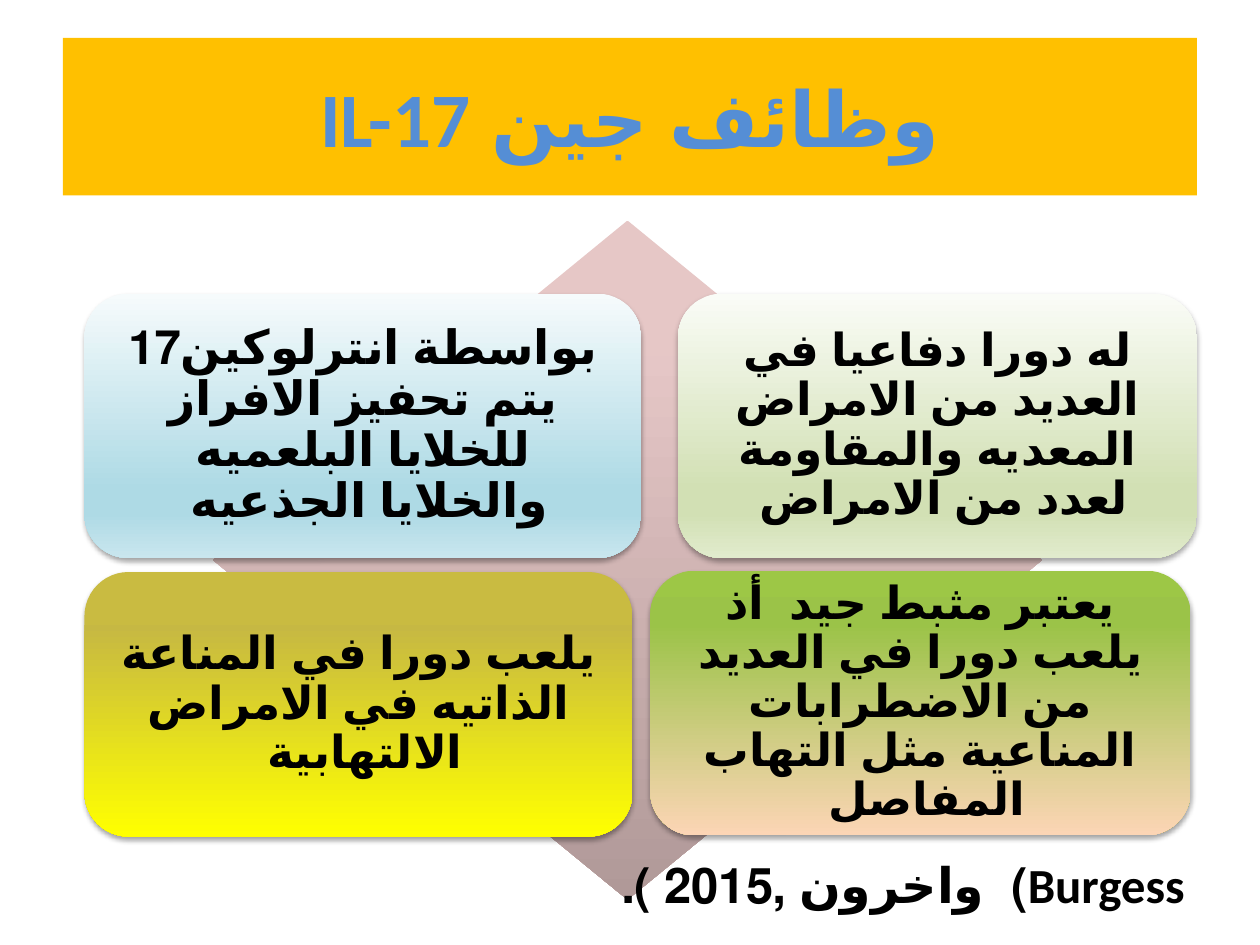
from lxml.etree import SubElement
from pptx import Presentation
from pptx.dml.color import RGBColor
from pptx.enum.lang import MSO_LANGUAGE_ID
from pptx.enum.shapes import MSO_SHAPE
from pptx.enum.text import MSO_ANCHOR, PP_ALIGN
from pptx.oxml.ns import qn
from pptx.util import Inches, Pt

HUES = {"band": "FFC000", "title": "558ED5", "text": "000000", "shade": "000000"}

# Gradient stops run from top to bottom: share in percent, colour
FADES = {
    "rose": [(0, "E6C7C6"), (20, "E5C6C6"), (100, "B09998")],
    "blue": [(0, "F6FBFC"), (74, "AEDAE5"), (83, "AEDAE5"), (100, "C9E6EE")],
    "green": [(0, "FAFCF7"), (74, "D2E0B4"), (83, "D2E0B4"), (100, "E1EBCD")],
    "gold": [(0, "C9BB41"), (20, "C6B843"), (100, "FFFF00")],
    "peach": [(0, "9DC746"), (20, "9BC348"), (100, "FCD5B5")],
}

# Left, top, width and height in cells of a 100 by 75 grid
CARDS = [
    ((6.7, 23.3, 44.2, 21), "blue", 27,
     "بواسطة انترلوكين17 يتم تحفيز الافراز للخلايا البلعميه والخلايا الجذعيه "),
    ((53.8, 23.3, 41.2, 21), "green", 26,
     "له دورا دفاعيا في العديد من الامراض المعديه والمقاومة لعدد من الامراض "),
    ((6.7, 45.4, 43.5, 21), "gold", 26,
     "يلعب دورا في المناعة الذاتيه في الامراض الالتهابية "),
    ((51.6, 45.3, 42.9, 21), "peach", 26,
     "يعتبر مثبط جيد  أذ يلعب دورا في العديد من الاضطرابات المناعية مثل التهاب المفاصل "),
]

deck = Presentation()
deck.slide_width, deck.slide_height = Inches(10), Inches(7.5)
cell = deck.slide_width / 100
slide = deck.slides.add_slide(deck.slide_layouts[6])


def draw(kind, box, fade=None):
    """Add a shape without line or shadow, filled with a gradient if one is named."""
    shape = slide.shapes.add_shape(kind, *(round(n * cell) for n in box))
    shape.shadow.inherit = False
    shape.line.fill.background()
    if fade:
        shape.fill.gradient()
        shape.fill.gradient_angle = 270
        stops = shape.element.spPr.find(".//" + qn("a:gsLst"))
        for old in list(stops):
            stops.remove(old)
        for share, hue in FADES[fade]:
            stop = SubElement(stops, qn("a:gs"), pos=str(share * 1000))
            SubElement(stop, qn("a:srgbClr"), val=hue)
    return shape


def write(shape, text, size, hue="text", align=PP_ALIGN.CENTER):
    """Set one bold right-to-left Arabic paragraph and return it."""
    frame = shape.text_frame
    frame.word_wrap = True
    para = frame.paragraphs[0]
    para.text = text
    para.alignment = align
    para._p.get_or_add_pPr().set("rtl", "1")
    para.runs[0].font.language_id = MSO_LANGUAGE_ID.ARABIC_IRAQ
    font = para.font
    font.name, font.size, font.bold = "Calibri", Pt(size), True
    font.color.rgb = RGBColor.from_string(HUES[hue])
    return para


band = draw(MSO_SHAPE.RECTANGLE, (5, 3, 90, 12.5))
band.fill.solid()
band.fill.fore_color.rgb = RGBColor.from_string(HUES["band"])
band.text_frame.vertical_anchor = MSO_ANCHOR.MIDDLE
write(band, "وظائف جين IL-17", 44, "title")

draw(MSO_SHAPE.DIAMOND, (16.9, 17.5, 65.8, 53.9), "rose")

for box, fade, size, text in CARDS:
    card = draw(MSO_SHAPE.ROUNDED_RECTANGLE, box, fade)
    glow = SubElement(card.element.spPr.find(qn("a:effectLst")), qn("a:outerShdw"),
                      blurRad=str(Pt(3.1)), dist=str(Pt(1.8)), dir="5400000", rotWithShape="0")
    tint = SubElement(glow, qn("a:srgbClr"), val=HUES["shade"])
    SubElement(tint, qn("a:alpha"), val="35000")
    frame = card.text_frame
    frame.vertical_anchor = MSO_ANCHOR.MIDDLE
    frame.margin_left = frame.margin_right = Inches(0.11)
    frame.margin_top = frame.margin_bottom = Inches(0.11)
    write(card, text, size).line_spacing = 0.9

cite = slide.shapes.add_textbox(*(round(n * cell) for n in (46.1, 67.3, 48.9, 5.7)))
write(cite, "Burgess)  واخرون ,2015 ).", 28, align=PP_ALIGN.RIGHT)

deck.save("out.pptx")
